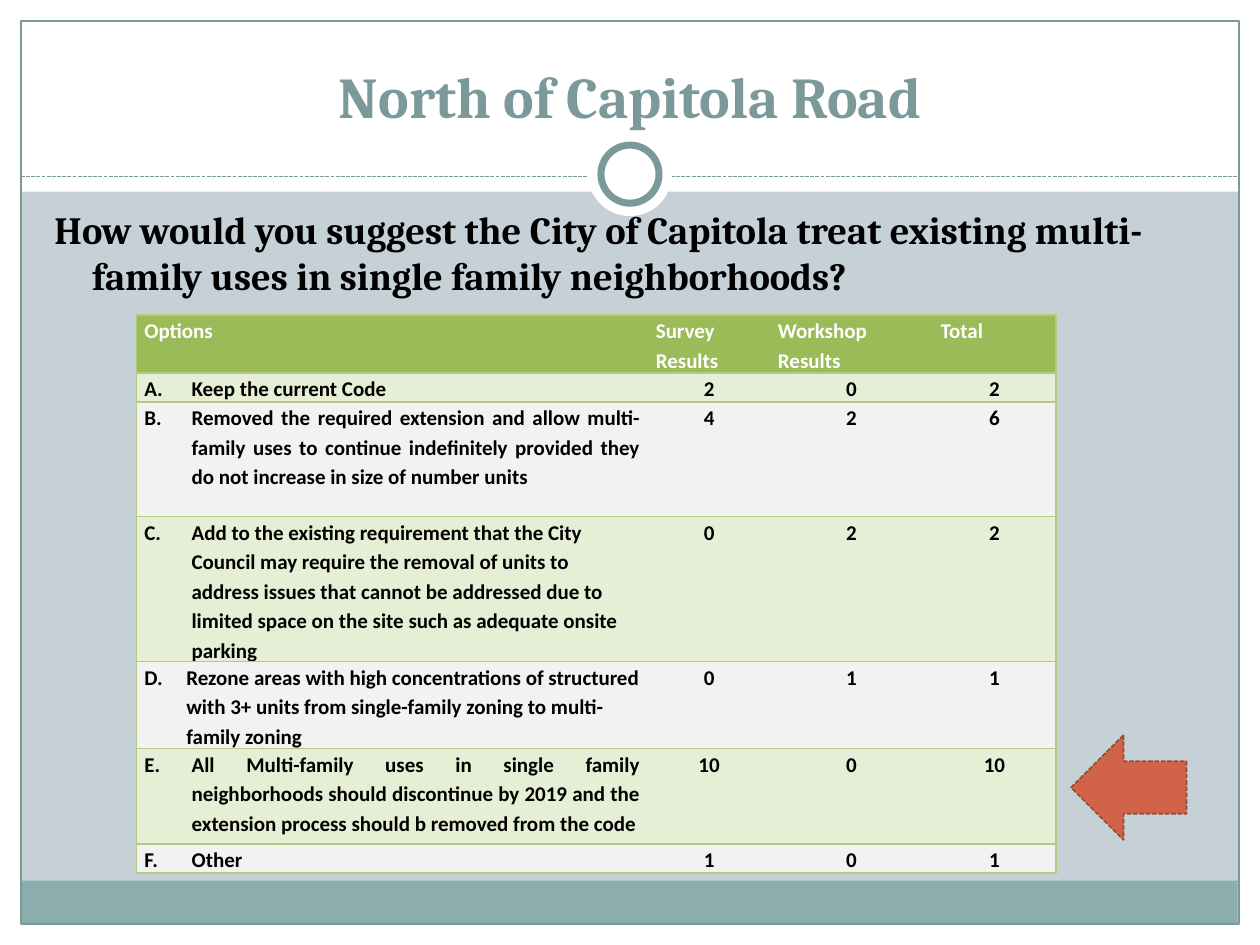
from lxml import etree
from pptx import Presentation
from pptx.dml.color import RGBColor
from pptx.enum.dml import MSO_LINE
from pptx.enum.shapes import MSO_CONNECTOR, MSO_SHAPE
from pptx.enum.text import MSO_ANCHOR, PP_ALIGN
from pptx.oxml.ns import qn
from pptx.util import Pt

RECTANGLE, OVAL, DOWN_ARROW = MSO_SHAPE.RECTANGLE, MSO_SHAPE.OVAL, MSO_SHAPE.DOWN_ARROW
STRAIGHT = MSO_CONNECTOR.STRAIGHT
SYSTEM_DASH = MSO_LINE.SQUARE_DOT
TOP, BOTTOM = MSO_ANCHOR.TOP, MSO_ANCHOR.BOTTOM
LEFT, CENTER, JUSTIFY = PP_ALIGN.LEFT, PP_ALIGN.CENTER, PP_ALIGN.JUSTIFY

WHITE, BLACK, TEAL = "FFFFFF", "000000", "7C999A"
HEADER_GREEN, BAND_GREEN, BAND_GRAY, BORDER_GREEN = "9BBB59", "E6EED5", "F2F2F2", "B3CC82"


def color(value):
    return RGBColor.from_string(value)


def style_font(font, name, size, value):
    for attribute, setting in {"name": name, "size": Pt(size), "bold": True}.items():
        setattr(font, attribute, setting)
    font.color.rgb = color(value)


deck = Presentation()
deck.slide_width, deck.slide_height = Pt(720), Pt(540)
page = deck.slides.add_slide(deck.slide_layouts[6])
page.background.fill.solid()
page.background.fill.fore_color.rgb = color("C5D1D7")

decorations = [
    (RECTANGLE, (0, 528, 720, 12), WHITE, None, 0),
    (RECTANGLE, (0, 0, 720, 109.5), WHITE, None, 0),
    (RECTANGLE, (0, 0, 12, 540), WHITE, None, 0),
    (RECTANGLE, (708, 0, 12, 540), WHITE, None, 0),
    (RECTANGLE, (11.75, 503.25, 695.5, 24.5), "8CADAE", None, 0),
    (RECTANGLE, (12, 12, 696, 516), None, TEAL, 0.75),
    (OVAL, (336, 75.5, 48, 48), WHITE, None, 0),
    (OVAL, (343.4, 82.9, 33.2, 33.2), WHITE, TEAL, 4),
    (DOWN_ARROW, (615, 417, 60, 66), "D16349", "9B4936", 0.9),
]
for kind, place, fill, line, width in decorations:
    if kind == OVAL and line is None:
        divider = page.shapes.add_connector(STRAIGHT, Pt(12), Pt(100.8), Pt(708), Pt(100.8))
        divider.line.color.rgb = color(TEAL)
        divider.line.width = Pt(0.75)
        divider.line.dash_style = SYSTEM_DASH
        etree.SubElement(divider._element.spPr, qn("a:effectLst"))
    shape = page.shapes.add_shape(kind, *map(Pt, place))
    shape.shadow.inherit = False
    if fill:
        shape.fill.solid()
        shape.fill.fore_color.rgb = color(fill)
    else:
        shape.fill.background()
    if line:
        shape.line.color.rgb = color(line)
        shape.line.width = Pt(width)
    else:
        shape.line.fill.background()
    if kind == DOWN_ARROW:
        shape.rotation = 90
        shape.line.dash_style = SYSTEM_DASH

headings = [
    ("North of Capitola Road", (24, 18, 672, 60), BOTTOM, CENTER, 33, TEAL, 0),
    ("How would you suggest the City of Capitola treat existing multi- family uses "
     "in single family neighborhoods?", (24, 114, 696, 72), TOP, LEFT, 22, BLACK, 21.6),
]
for text, place, anchor, alignment, size, value, hanging in headings:
    box = page.shapes.add_textbox(*map(Pt, place))
    box.text_frame.word_wrap = True
    box.text_frame.vertical_anchor = anchor
    para = box.text_frame.paragraphs[0]
    para.alignment = alignment
    properties = para._p.get_or_add_pPr()
    properties.set("marL", str(Pt(hanging)))
    properties.set("indent", str(-Pt(hanging)))
    span = para.add_run()
    span.text = text
    style_font(span.font, "Cambria", size, value)

rows = [
    (31.7, JUSTIFY, 0, ("Options", "Survey\nResults", "Workshop\nResults", "Total")),
    (15.8, JUSTIFY, 27, ("Keep the current Code", "2", "0", "2")),
    (65.5, JUSTIFY, 27, ("B.\tRemoved the required extension and allow multi-family uses to continue "
                         "indefinitely provided they do not increase in size of number units",
                         "4", "2", "6")),
    (78.5, LEFT, 27, ("C.\tAdd to the existing requirement that the City Council may require the "
                      "removal of units to address issues that cannot be addressed due to limited "
                      "space on the site such as adequate onsite parking", "0", "2", "2")),
    (47.5, LEFT, 24, ("D.\tRezone areas with high concentrations of structured with 3+ units from "
                      "single-family zoning to multi-family zoning", "0", "1", "1")),
    (54.7, JUSTIFY, 27, ("E.\tAll Multi-family uses in single family neighborhoods should discontinue "
                         "by 2019 and the extension process should b removed from the code",
                         "10", "0", "10")),
    (15.8, JUSTIFY, 27, ("F.\tOther", "1", "0", "1")),
]
column_widths = [292.3, 69.8, 92.9, 70.6]
last_column = len(column_widths) - 1
frame = page.shapes.add_table(len(rows), len(column_widths), Pt(78), Pt(180),
                              Pt(sum(column_widths)), Pt(sum(row[0] for row in rows)))
table = frame.table
table.first_row = table.horz_banding = False
for column, width in zip(table.columns, column_widths):
    column.width = Pt(width)

for row_index, (height, option_alignment, hanging, texts) in enumerate(rows):
    table.rows[row_index].height = Pt(height)
    is_header = row_index == 0
    band = HEADER_GREEN if is_header else (BAND_GRAY, BAND_GREEN)[row_index % 2]
    for column_index, text in enumerate(texts):
        cell = table.cell(row_index, column_index)
        for side, inset in {"left": 4.5, "right": 4.5, "top": 0, "bottom": 0}.items():
            setattr(cell, f"margin_{side}", Pt(inset))
        borders = {"lnL": column_index == 0, "lnR": column_index == last_column,
                   "lnT": True, "lnB": True}
        for tag, visible in borders.items():
            border = etree.SubElement(cell._tc.get_or_add_tcPr(), qn(f"a:{tag}"), w=str(Pt(1)))
            if visible:
                paint = etree.SubElement(border, qn("a:solidFill"))
                etree.SubElement(paint, qn("a:srgbClr"), val=BORDER_GREEN)
            else:
                etree.SubElement(border, qn("a:noFill"))
        cell.fill.solid()
        cell.fill.fore_color.rgb = color(band)
        cell.text = text
        is_option = column_index == 0 and not is_header
        for para in cell.text_frame.paragraphs:
            para.alignment = option_alignment if is_header or is_option else CENTER
            para.line_spacing = 1.15
            if is_option:
                properties = para._p.get_or_add_pPr()
                properties.set("marL", str(Pt(hanging)))
                properties.set("indent", str(-Pt(hanging)))
                if "\t" not in text:
                    etree.SubElement(properties, qn("a:buFont"), typeface="+mj-lt")
                    etree.SubElement(properties, qn("a:buAutoNum"), type="alphaUcPeriod")
            for span in para.runs:
                style_font(span.font, "Calibri", 12, WHITE if is_header else BLACK)

deck.save("out.pptx")
